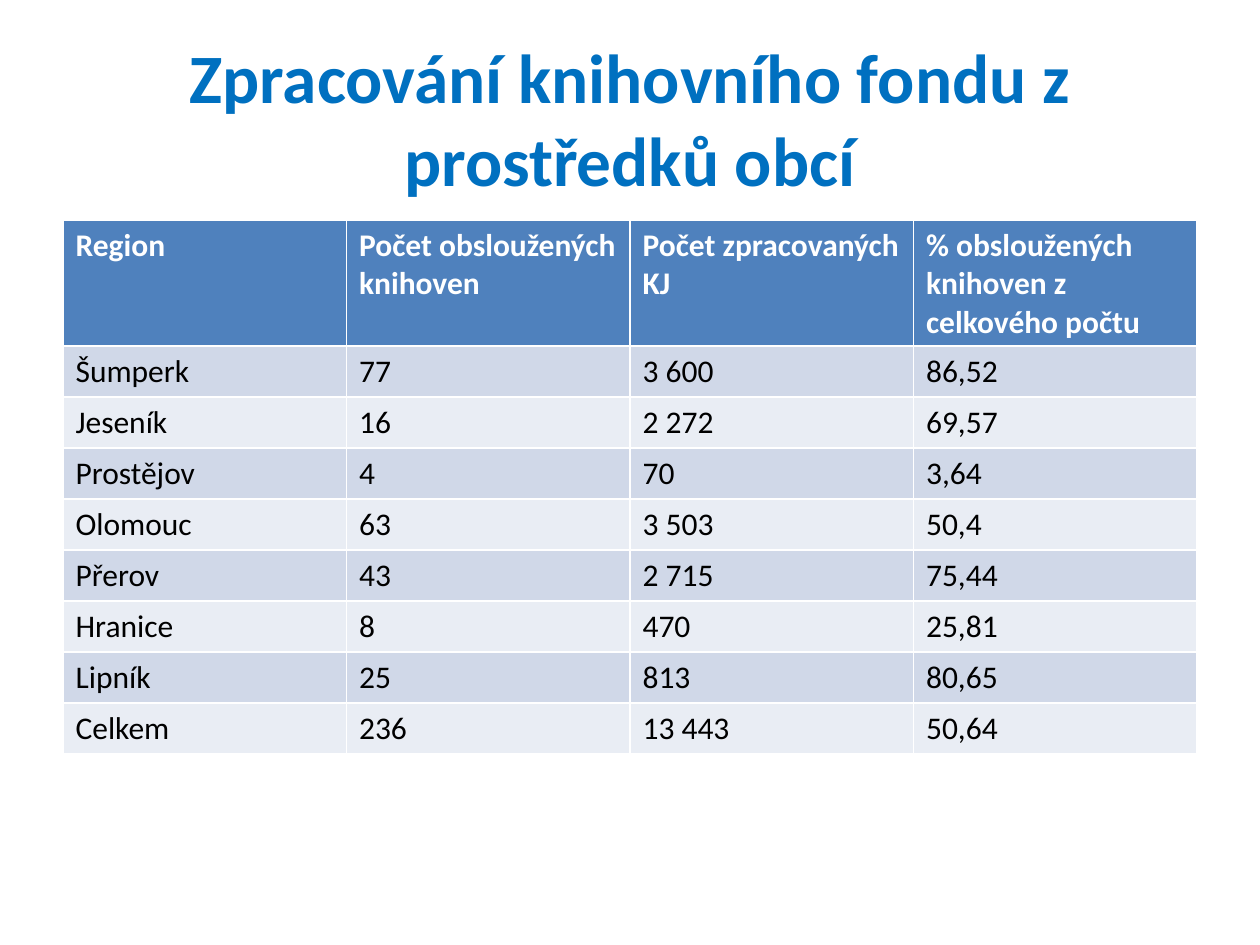
from pptx import Presentation
from pptx.dml.color import RGBColor
from pptx.enum.text import MSO_ANCHOR, PP_ALIGN
from pptx.util import Pt

MIDDLE = MSO_ANCHOR.MIDDLE
CENTER = PP_ALIGN.CENTER

TITLE = "Zpracování knihovního fondu z prostředků obcí"
HEADER = ("Region", "Počet obsloužených knihoven", "Počet zpracovaných KJ",
          "% obsloužených knihoven z celkového počtu")
REGIONS = [
    ("Šumperk", "77", "3 600", "86,52"),
    ("Jeseník", "16", "2 272", "69,57"),
    ("Prostějov", "4", "70", "3,64"),
    ("Olomouc", "63", "3 503", "50,4"),
    ("Přerov", "43", "2 715", "75,44"),
    ("Hranice", "8", "470", "25,81"),
    ("Lipník", "25", "813", "80,65"),
    ("Celkem", "236", "13 443", "50,64"),
]

FONT = "Calibri"
TITLE_COLOR = "0070C0"
HEADER_FILL, HEADER_TEXT = "4F81BD", "FFFFFF"
BAND_FILLS, BODY_TEXT = ("D0D8E8", "E9EDF4"), "000000"

SLIDE_WIDTH, SLIDE_HEIGHT = 1260, 945
MARGIN = 63
CONTENT_WIDTH = SLIDE_WIDTH - 2 * MARGIN
TITLE_TOP, TITLE_HEIGHT = 38, 158
TABLE_TOP, HEADER_HEIGHT, ROW_HEIGHT = 220, 126, 51


def px(length):
    return round(length * 914400 / 126)


def color(value):
    return RGBColor.from_string(value)


def style_font(paragraph, size, text_color, bold):
    font = paragraph.font
    font.name, font.size, font.bold = FONT, Pt(size), bold
    font.color.rgb = color(text_color)


def add_title(slide):
    box = slide.shapes.add_textbox(px(MARGIN), px(TITLE_TOP),
                                   px(CONTENT_WIDTH), px(TITLE_HEIGHT))
    frame = box.text_frame
    frame.word_wrap = True
    frame.vertical_anchor = MIDDLE
    paragraph = frame.paragraphs[0]
    paragraph.text = TITLE
    paragraph.alignment = CENTER
    style_font(paragraph, 39.6, TITLE_COLOR, True)


def add_region_table(slide):
    """The default table style supplies the white cell borders."""
    rows = [HEADER, *REGIONS]
    height = HEADER_HEIGHT + ROW_HEIGHT * len(REGIONS)
    table = slide.shapes.add_table(len(rows), len(HEADER), px(MARGIN), px(TABLE_TOP),
                                   px(CONTENT_WIDTH), px(height)).table
    for row_index, values in enumerate(rows):
        is_header = row_index == 0
        table.rows[row_index].height = px(HEADER_HEIGHT if is_header else ROW_HEIGHT)
        fill = HEADER_FILL if is_header else BAND_FILLS[(row_index - 1) % 2]
        text_color = HEADER_TEXT if is_header else BODY_TEXT
        for column_index, value in enumerate(values):
            cell = table.cell(row_index, column_index)
            cell.text = value
            cell.fill.solid()
            cell.fill.fore_color.rgb = color(fill)
            style_font(cell.text_frame.paragraphs[0], 18, text_color, is_header)


def main():
    presentation = Presentation()
    presentation.slide_width = px(SLIDE_WIDTH)
    presentation.slide_height = px(SLIDE_HEIGHT)
    slide = presentation.slides.add_slide(presentation.slide_layouts[6])
    add_title(slide)
    add_region_table(slide)
    presentation.save("out.pptx")


if __name__ == "__main__":
    main()
